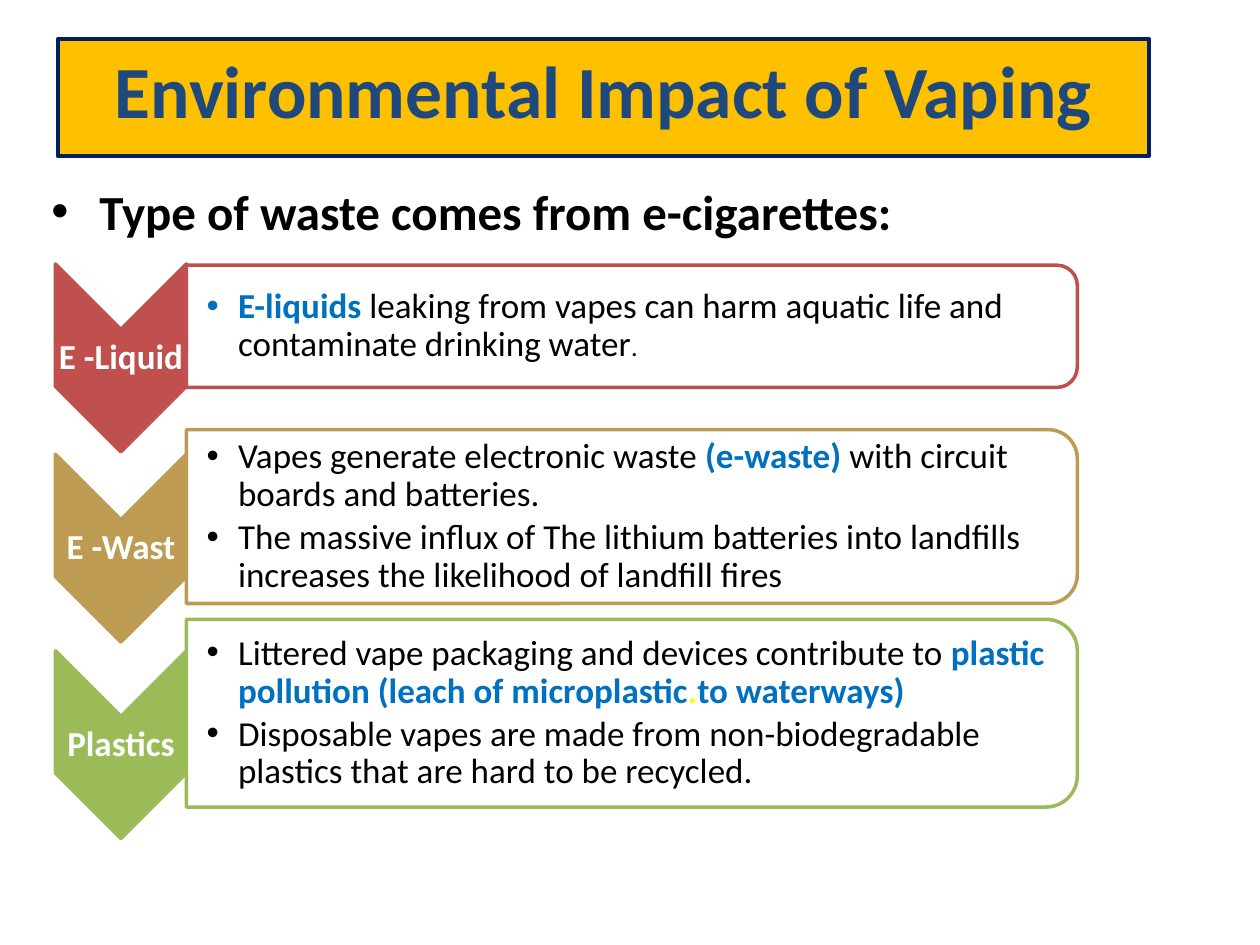
"""Build the slide on the environmental impact of vaping."""
from lxml import etree
from pptx import Presentation
from pptx import util as u
from pptx.dml.color import RGBColor
from pptx.enum import shapes, text
from pptx.oxml import ns

Inches, Pt = u.Inches, u.Pt
AMBER = RGBColor(0xFF, 0xC0, 0x00)
NAVY = RGBColor(0x00, 0x20, 0x60)
TITLE_BLUE = RGBColor(0x1F, 0x49, 0x7D)
BLUE = RGBColor(0x00, 0x70, 0xC0)
YELLOW = RGBColor(0xFF, 0xFF, 0x00)
BLACK = RGBColor(0x00, 0x00, 0x00)
WHITE = RGBColor(0xFF, 0xFF, 0xFF)
RED = RGBColor(0xC0, 0x50, 0x4D)
TAN = RGBColor(0xBD, 0x9B, 0x53)
GREEN = RGBColor(0x9B, 0xBB, 0x59)


def add_run(p, wording, size, color, bold):
    r = p.add_run()
    r.text = wording
    r.font.name, r.font.size, r.font.bold = "Calibri", Pt(size), bold
    r.font.color.rgb = color


def add_bullet(p, indent):
    pPr = p._p.get_or_add_pPr()
    pPr.set("marL", str(Inches(indent)))
    pPr.set("indent", str(-Inches(indent)))
    etree.SubElement(pPr, ns.qn("a:buFont")).set("typeface", "Arial")
    etree.SubElement(pPr, ns.qn("a:buChar")).set("char", "•")


prs = Presentation()
prs.slide_width, prs.slide_height = Inches(10), Inches(7.5)
s = prs.slides.add_slide(prs.slide_layouts[5])

title = s.shapes.title
title.left, title.top = Inches(0.46), Inches(0.31)
title.width, title.height = Inches(8.66), Inches(0.93)
title.fill.solid()
title.fill.fore_color.rgb = AMBER
title.line.color.rgb = NAVY
title.line.width = Pt(2.25)
tf = title.text_frame
tf.vertical_anchor = text.MSO_ANCHOR.TOP
tf.paragraphs[0].alignment = text.PP_ALIGN.CENTER
add_run(tf.paragraphs[0], "Environmental Impact of Vaping", 42, TITLE_BLUE, True)

tf = s.shapes.add_textbox(Inches(0.31), Inches(1.39), Inches(9.22), Inches(0.6)).text_frame
tf.word_wrap = True
add_bullet(tf.paragraphs[0], 0.38)
add_run(tf.paragraphs[0], "Type of waste comes from e-cigarettes:", 28, BLACK, True)

wastes = [
    ("E -Liquid", RED, 2.84, 0.97, [
        [("E-liquids ", 20, BLUE, True),
         ("leaking from vapes can harm aquatic life and contaminate drinking water", 20, BLACK, False),
         (".", 15, BLACK, False)]]),
    ("E -Wast", TAN, 4.35, 1.38, [
        [("Vapes generate electronic waste ", 20, BLACK, False),
         ("(e-waste) ", 20, BLUE, True),
         ("with circuit boards and batteries.", 20, BLACK, False)],
        [("The massive influx of The lithium batteries into landfills "
          "increases the likelihood of landfill fires", 20, BLACK, False)]]),
    ("Plastics", GREEN, 5.91, 1.49, [
        [("Littered vape packaging and devices contribute to ", 20, BLACK, False),
         ("plastic pollution (leach of microplastic", 20, BLUE, True),
         (".", 20, YELLOW, True),
         ("to waterways)", 20, BLUE, True)],
        [("Disposable vapes are made from non-biodegradable plastics "
          "that are hard to be recycled.", 20, BLACK, False)]]),
]
chevron_x, chevron_length, chevron_width = 0.96, 1.49, 1.04
panel_left, panel_width = 1.48, 7.07

for label, color, middle, panel_height, points in wastes:
    panel_middle = middle - 0.25
    text_height = panel_height * 0.905
    outlines = [
        (shapes.MSO_SHAPE.CHEVRON, chevron_x, middle, chevron_length, chevron_width, color),
        (shapes.MSO_SHAPE.ROUND_2_SAME_RECTANGLE, panel_left + panel_width / 2,
         panel_middle, panel_height, panel_width, WHITE),
    ]
    for preset, x, y, width, height, fill in outlines:
        sp = s.shapes.add_shape(preset, Inches(x - width / 2), Inches(y - height / 2),
                                Inches(width), Inches(height))
        sp.rotation = 90
        sp.shadow.inherit = False
        sp.fill.solid()
        sp.fill.fore_color.rgb = fill
        sp.line.color.rgb = color
        sp.line.width = Pt(2)
    white = sp._element.spPr.find(ns.qn("a:solidFill")).find(ns.qn("a:srgbClr"))
    etree.SubElement(white, ns.qn("a:alpha")).set("val", "90000")

    boxes = [
        (chevron_x - chevron_width / 2, middle, chevron_width, 0.45, 0.01),
        (panel_left, panel_middle, 7, text_height, 0.16),
    ]
    frames = []
    for left, y, width, height, inset in boxes:
        tf = s.shapes.add_textbox(Inches(left), Inches(y - height / 2),
                                  Inches(width), Inches(height)).text_frame
        tf.word_wrap = True
        tf.vertical_anchor = text.MSO_ANCHOR.MIDDLE
        tf.margin_left = Inches(inset)
        tf.margin_top = tf.margin_right = tf.margin_bottom = Inches(0.01)
        frames.append(tf)

    p = frames[0].paragraphs[0]
    p.alignment = text.PP_ALIGN.CENTER
    p.line_spacing = 0.9
    add_run(p, label, 20, WHITE, True)

    for i, runs in enumerate(points):
        p = frames[1].add_paragraph() if i else frames[1].paragraphs[0]
        p.line_spacing = 0.9
        p.space_after = Pt(3)
        add_bullet(p, 0.25)
        for run in runs:
            add_run(p, *run)

prs.save("out.pptx")
